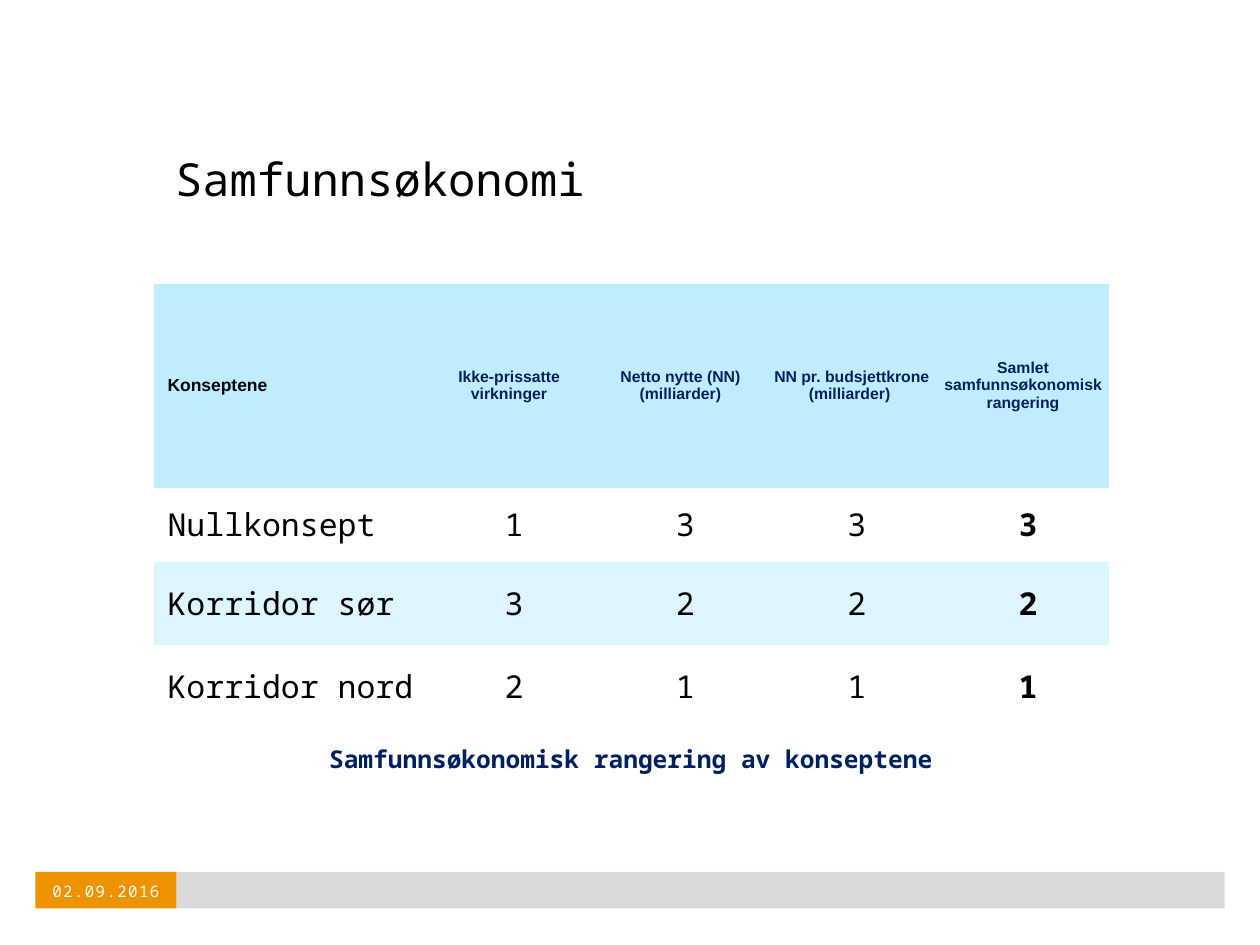
from pptx import Presentation
from pptx.dml.color import RGBColor
from pptx.enum.shapes import MSO_SHAPE
from pptx.enum.text import MSO_ANCHOR, PP_ALIGN
from pptx.util import Inches, Pt

RECT = MSO_SHAPE.RECTANGLE
MIDDLE = MSO_ANCHOR.MIDDLE
LEFT, CENTER = PP_ALIGN.LEFT, PP_ALIGN.CENTER

TITLE = "Samfunnsøkonomi"
CAPTION = "Samfunnsøkonomisk rangering av konseptene"
DATE = "02.09.2016"
HEADER = [
    "Konseptene",
    "Ikke-prissatte virkninger",
    "Netto nytte (NN)\n(milliarder)",
    "NN pr. budsjettkrone\n(milliarder) ",
    "Samlet samfunnsøkonomisk rangering",
]
RANKING = [
    ("Nullkonsept", "1", "3", "3", "3"),
    ("Korridor sør", "3", "2", "2", "2"),
    ("Korridor nord", "2", "1", "1", "1"),
]
COL_WIDTHS = [2.14] + [1.36] * 4
ROW_HEIGHTS = [1.62, 0.59, 0.66, 0.66]
TABLE_LEFT, TABLE_TOP = 1.22, 2.25
BAR_LEFT, BAR_TOP, BAR_HEIGHT = 0.28, 6.92, 0.29
DATE_WIDTH, BAR_WIDTH = 1.12, 9.44
NO_GRID_STYLE = "{2D5ABB26-0587-4C30-8999-92F81FD0307C}"

THEME = {
    "mono": "Noto Sans Mono", "sans": "Arial",
    "black": "000000", "navy": "002060", "white": "FFFFFF",
    "grey": "DADADA", "orange": "ED9300",
    "rows": ["BFEDFF", None, "DDF5FF", "FFFFFF"],
    "title": 26, "body": 18, "caption": 14, "corner": 10, "small": 9,
}


def rgb(name):
    return RGBColor.from_string(THEME.get(name, name))


def write(tf, text, size="body", font="mono", color="black", bold=False,
          align=LEFT, spacing=None):
    p = tf.paragraphs[0]
    p.alignment = align
    for i, line in enumerate(text.split("\n")):
        if i:
            p.add_line_break()
        r = p.add_run()
        r.text = line
        r.font.size = Pt(THEME[size])
        r.font.name = THEME[font]
        r.font.bold = bold
        r.font.color.rgb = rgb(color)
        if spacing:
            r._r.get_or_add_rPr().set("spc", str(round(spacing * 100)))


def set_margins(obj, left=0):
    obj.margin_left = Inches(left)
    obj.margin_right = obj.margin_top = obj.margin_bottom = 0


def add_bar(s, left, width, color):
    sp = s.shapes.add_shape(RECT, Inches(left), Inches(BAR_TOP),
                            Inches(width), Inches(BAR_HEIGHT))
    sp.shadow.inherit = False
    sp.fill.solid()
    sp.fill.fore_color.rgb = rgb(color)
    sp.line.fill.background()


def add_text(s, box, text, **fmt):
    tf = s.shapes.add_textbox(*map(Inches, box)).text_frame
    tf.word_wrap = True
    tf.vertical_anchor = MIDDLE
    set_margins(tf)
    write(tf, text, **fmt)


def cell_format(row, col):
    if row == 0 and col == 0:
        return dict(size="corner", font="sans", bold=True)
    if row == 0:
        return dict(size="small", font="sans", color="navy", bold=True,
                    align=CENTER)
    if col == 0:
        return {}
    return dict(align=CENTER, bold=col == len(HEADER) - 1)


def add_ranking(s):
    data = [HEADER, *RANKING]
    table = s.shapes.add_table(
        len(data), len(HEADER), Inches(TABLE_LEFT), Inches(TABLE_TOP),
        Inches(sum(COL_WIDTHS)), Inches(sum(ROW_HEIGHTS))).table
    table._tbl.tblPr[0].text = NO_GRID_STYLE
    table.horz_banding = False
    for column, width in zip(table.columns, COL_WIDTHS):
        column.width = Inches(width)
    for i, values in enumerate(data):
        table.rows[i].height = Inches(ROW_HEIGHTS[i])
        fill = THEME["rows"][i]
        for j, value in enumerate(values):
            cell = table.cell(i, j)
            cell.vertical_anchor = MIDDLE
            set_margins(cell, 0.11 if j == 0 else 0.08 if i else 0)
            if fill:
                cell.fill.solid()
                cell.fill.fore_color.rgb = rgb(fill)
            else:
                cell.fill.background()
            write(cell.text_frame, value, **cell_format(i, j))


def main():
    prs = Presentation()
    prs.slide_width, prs.slide_height = Inches(10), Inches(7.5)
    s = prs.slides.add_slide(prs.slide_layouts[5])

    add_bar(s, BAR_LEFT + DATE_WIDTH, BAR_WIDTH - DATE_WIDTH, "grey")
    add_bar(s, BAR_LEFT, DATE_WIDTH, "orange")

    title = s.shapes.title
    title.left, title.top = Inches(1.39), Inches(1.16)
    title.width, title.height = Inches(7.65), Inches(0.51)
    title.text_frame.vertical_anchor = MIDDLE
    set_margins(title.text_frame)
    write(title.text_frame, TITLE, size="title")

    add_ranking(s)
    add_text(s, (BAR_LEFT, 6.98, DATE_WIDTH, 0.19), DATE, size="small",
             color="white", align=CENTER, spacing=0.8)
    add_text(s, (TABLE_LEFT, 5.85, sum(COL_WIDTHS), 0.34), CAPTION,
             size="caption", color="navy", bold=True, align=CENTER)
    prs.save("out.pptx")


if __name__ == "__main__":
    main()
